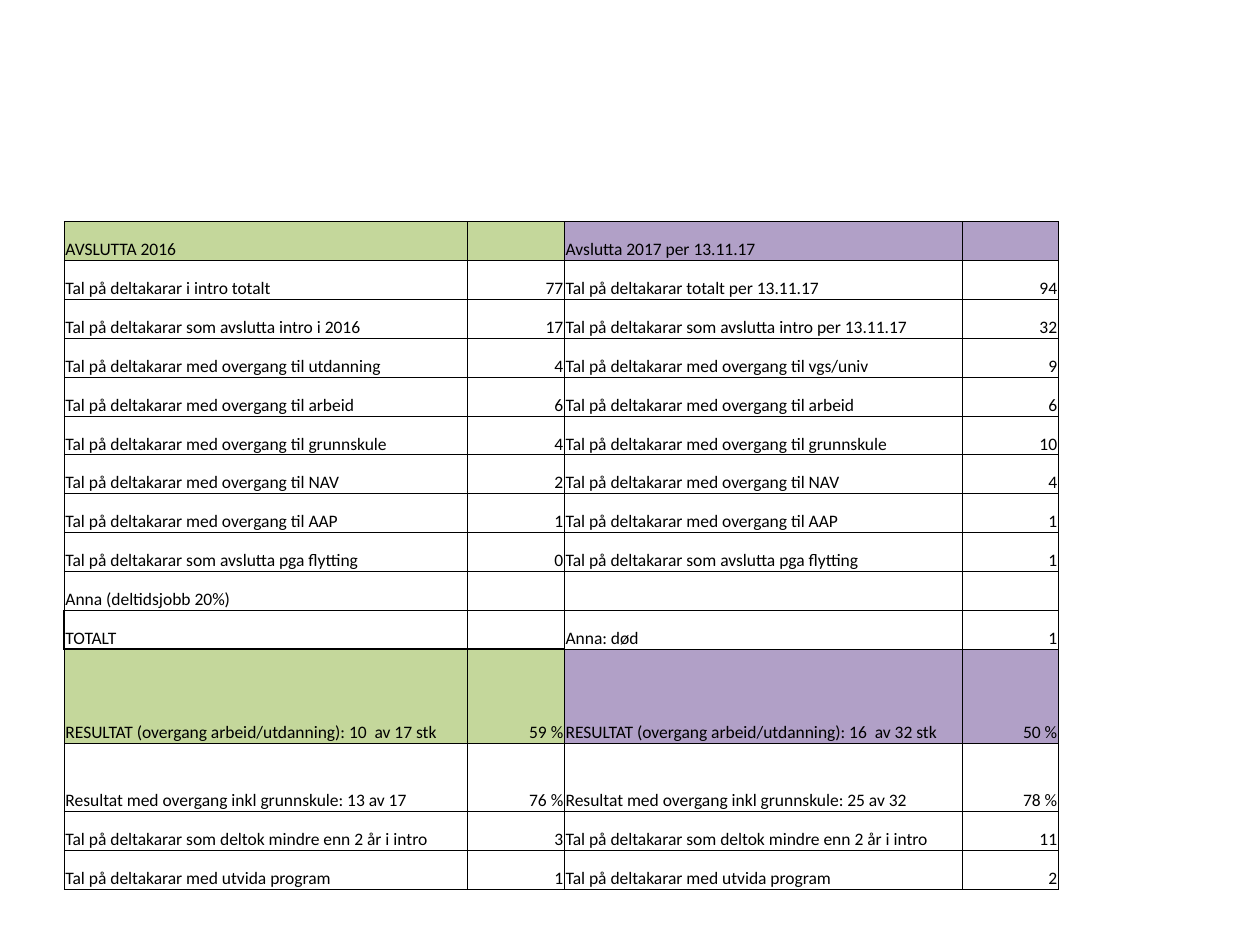
"""Build a slide with a table of programme results for 2016 and 2017."""
from lxml import etree
from pptx import Presentation
from pptx.dml.color import RGBColor
from pptx.enum.text import MSO_ANCHOR, PP_ALIGN
from pptx.oxml.ns import qn
from pptx.util import Inches, Pt

BOTTOM = MSO_ANCHOR.BOTTOM
LEFT, RIGHT = PP_ALIGN.LEFT, PP_ALIGN.RIGHT

COLORS = {"text": "000000", "border": "000000", "2016": "C4D79B", "2017": "B1A0C7"}
FONT, FONT_SIZE = "Calibri", 10

ROWS = [
    ("AVSLUTTA 2016", "", "Avslutta 2017 per 13.11.17", ""),
    ("Tal på deltakarar i intro totalt", "77", "Tal på deltakarar totalt per 13.11.17", "94"),
    ("Tal på deltakarar som avslutta intro i 2016", "17",
     "Tal på deltakarar som avslutta intro per 13.11.17", "32"),
    ("Tal på deltakarar med overgang til utdanning", "4",
     "Tal på deltakarar med overgang til vgs/univ", "9"),
    ("Tal på deltakarar med overgang til arbeid", "6",
     "Tal på deltakarar med overgang til arbeid", "6"),
    ("Tal på deltakarar med overgang til grunnskule", "4",
     "Tal på deltakarar med overgang til grunnskule", "10"),
    ("Tal på deltakarar med overgang til NAV", "2",
     "Tal på deltakarar med overgang til NAV", "4"),
    ("Tal på deltakarar med overgang til AAP", "1",
     "Tal på deltakarar med overgang til AAP", "1"),
    ("Tal på deltakarar som avslutta pga flytting", "0",
     "Tal på deltakarar som avslutta pga flytting", "1"),
    ("Anna (deltidsjobb 20%)", "", "", ""),
    ("TOTALT", "", "Anna: død", "1"),
    ("RESULTAT (overgang arbeid/utdanning): 10  av 17 stk", "59 %",
     "RESULTAT (overgang arbeid/utdanning): 16  av 32 stk", "50 %"),
    ("Resultat med overgang inkl grunnskule: 13 av 17", "76 %",
     "Resultat med overgang inkl grunnskule: 25 av 32", "78 %"),
    ("Tal på deltakarar som deltok mindre enn 2 år i intro", "3",
     "Tal på deltakarar som deltok mindre enn 2 år i intro", "11"),
    ("Tal på deltakarar med utvida program", "1", "Tal på deltakarar med utvida program", "2"),
]
HEADER, TOTAL, RESULT, RESULT_WITH_SCHOOL = 0, 10, 11, 12
COLUMN_WIDTHS = [3.2, 0.77, 3.16, 0.76]
TABLE_LEFT, TABLE_TOP, TABLE_HEIGHT = 0.51, 1.76, 5.3
TALL_ROWS = {RESULT: 0.75, RESULT_WITH_SCHOOL: 0.54}
ROW_HEIGHT = (TABLE_HEIGHT - sum(TALL_ROWS.values())) / (len(ROWS) - len(TALL_ROWS))
THIN, THICK = 0.5, 1
THICK_SIDES = {(TOTAL, 0): "LRB", (TOTAL, 1): "LB", (RESULT, 0): "T", (RESULT, 1): "T"}


def draw_borders(cell, thick_sides):
    properties = cell._tc.get_or_add_tcPr()
    for side in "LRTB":
        width = Pt(THICK if side in thick_sides else THIN)
        line = etree.SubElement(properties, qn(f"a:ln{side}"), w=str(width))
        fill = etree.SubElement(line, qn("a:solidFill"))
        etree.SubElement(fill, qn("a:srgbClr"), val=COLORS["border"])


def fill_cell(cell, row, column):
    if row in (HEADER, RESULT):
        cell.fill.solid()
        year = "2016" if column < 2 else "2017"
        cell.fill.fore_color.rgb = RGBColor.from_string(COLORS[year])
    else:
        cell.fill.background()


def write_text(cell, text, alignment):
    cell.vertical_anchor = BOTTOM
    cell.margin_left = cell.margin_right = cell.margin_top = Inches(0.01)
    cell.margin_bottom = 0
    para = cell.text_frame.paragraphs[0]
    para.text = text
    para.alignment = alignment
    for span in para.runs:
        span.font.name = FONT
        span.font.size = Pt(FONT_SIZE)
        span.font.color.rgb = RGBColor.from_string(COLORS["text"])
    if not text:
        etree.SubElement(para._p, qn("a:endParaRPr"), sz=str(FONT_SIZE * 100))


def main():
    deck = Presentation()
    deck.slide_width, deck.slide_height = Inches(10), Inches(7.5)
    page = deck.slides.add_slide(deck.slide_layouts[6])
    table = page.shapes.add_table(
        len(ROWS), len(COLUMN_WIDTHS), Inches(TABLE_LEFT), Inches(TABLE_TOP),
        Inches(sum(COLUMN_WIDTHS)), Inches(TABLE_HEIGHT)).table
    table.first_row = table.horz_banding = False
    for column, width in enumerate(COLUMN_WIDTHS):
        table.columns[column].width = Inches(width)
    for row, texts in enumerate(ROWS):
        table.rows[row].height = Inches(TALL_ROWS.get(row, ROW_HEIGHT))
        for column, text in enumerate(texts):
            cell = table.cell(row, column)
            draw_borders(cell, THICK_SIDES.get((row, column), ""))
            fill_cell(cell, row, column)
            write_text(cell, text, RIGHT if column % 2 else LEFT)
    deck.save("out.pptx")


if __name__ == "__main__":
    main()
